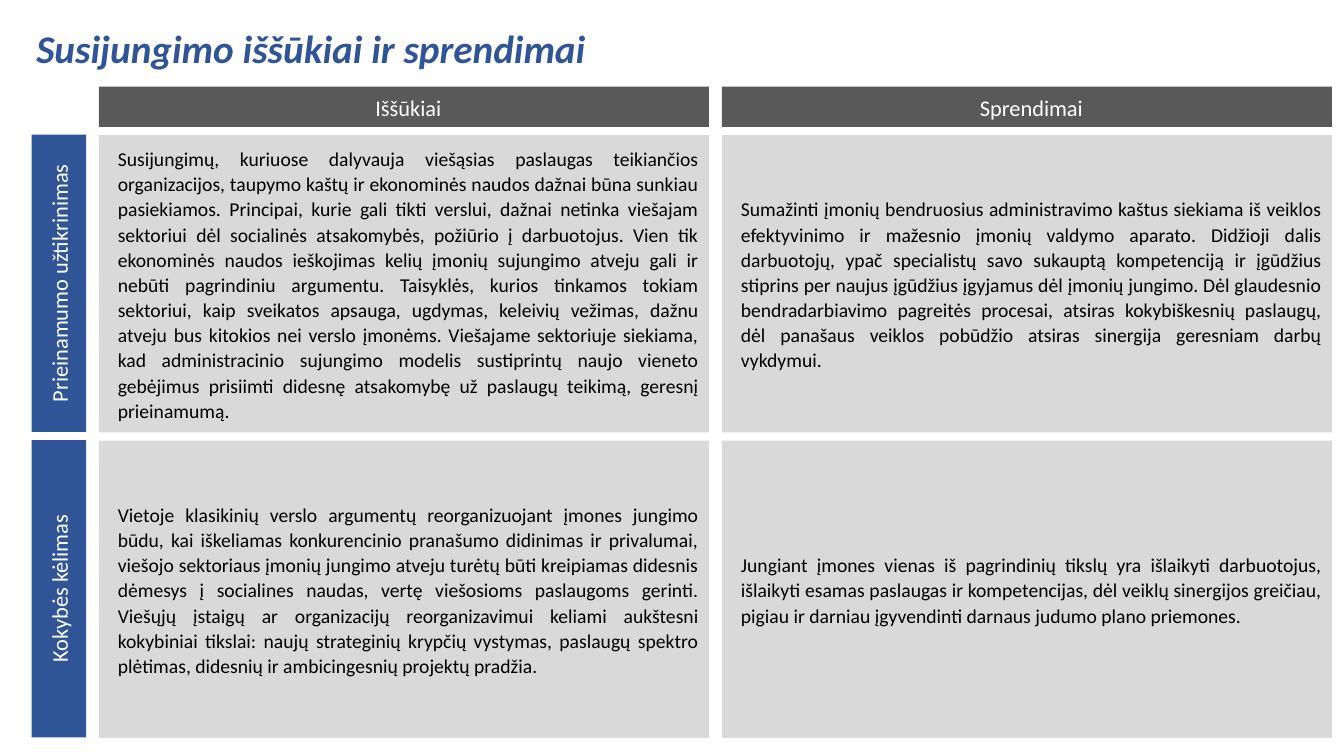
from pptx import Presentation
from pptx.dml.color import RGBColor
from pptx.enum.shapes import MSO_SHAPE
from pptx.enum.text import MSO_ANCHOR, MSO_AUTO_SIZE, PP_ALIGN
from pptx.util import Pt

PX = 9144  # 100 px to the inch
RECTANGLE = MSO_SHAPE.RECTANGLE
TOP, MIDDLE = MSO_ANCHOR.TOP, MSO_ANCHOR.MIDDLE
FIT_SHAPE = MSO_AUTO_SIZE.SHAPE_TO_FIT_TEXT
LEFT, CENTER, JUSTIFY = PP_ALIGN.LEFT, PP_ALIGN.CENTER, PP_ALIGN.JUSTIFY
TITLE_ONLY = 5

FONT = "Calibri"
COLORS = {
    "blue": "2F5597",
    "header": "595959",
    "cell": "D9D9D9",
    "black": "000000",
    "white": "FFFFFF",
}

TITLE = "Susijungimo iššūkiai ir sprendimai"
HEADERS = ["Iššūkiai", "Sprendimai"]
ROWS = [
    ("Prieinamumo užtikrinimas", [
        "Susijungimų, kuriuose dalyvauja viešąsias paslaugas teikiančios "
        "organizacijos, taupymo kaštų ir ekonominės naudos dažnai būna sunkiau "
        "pasiekiamos. Principai, kurie gali tikti verslui, dažnai netinka viešajam "
        "sektoriui dėl socialinės atsakomybės, požiūrio į darbuotojus. Vien tik "
        "ekonominės naudos ieškojimas kelių įmonių sujungimo atveju gali ir nebūti "
        "pagrindiniu argumentu. Taisyklės, kurios tinkamos tokiam sektoriui, kaip "
        "sveikatos apsauga, ugdymas, keleivių vežimas, dažnu atveju bus kitokios nei "
        "verslo įmonėms. Viešajame sektoriuje siekiama, kad administracinio sujungimo "
        "modelis sustiprintų naujo vieneto gebėjimus prisiimti didesnę atsakomybę už "
        "paslaugų teikimą, geresnį prieinamumą.",
        "Sumažinti įmonių bendruosius administravimo kaštus siekiama iš veiklos "
        "efektyvinimo ir mažesnio įmonių valdymo aparato. Didžioji dalis darbuotojų, "
        "ypač specialistų savo sukauptą kompetenciją ir įgūdžius stiprins per naujus "
        "įgūdžius įgyjamus dėl įmonių jungimo. Dėl glaudesnio bendradarbiavimo "
        "pagreitės procesai, atsiras kokybiškesnių paslaugų, dėl panašaus veiklos "
        "pobūdžio atsiras sinergija geresniam darbų vykdymui.",
    ]),
    ("Kokybės kėlimas", [
        "Vietoje klasikinių verslo argumentų reorganizuojant įmones jungimo būdu, kai "
        "iškeliamas konkurencinio pranašumo didinimas ir privalumai, viešojo sektoriaus "
        "įmonių jungimo atveju turėtų būti kreipiamas didesnis dėmesys į socialines "
        "naudas, vertę viešosioms paslaugoms gerinti. Viešųjų įstaigų ar organizacijų "
        "reorganizavimui keliami aukštesni kokybiniai tikslai: naujų strateginių krypčių "
        "vystymas, paslaugų spektro plėtimas, didesnių ir ambicingesnių projektų pradžia.",
        "Jungiant įmones vienas iš pagrindinių tikslų yra išlaikyti darbuotojus, "
        "išlaikyti esamas paslaugas ir kompetencijas, dėl veiklų sinergijos greičiau, "
        "pigiau ir darniau įgyvendinti darnaus judumo plano priemones.",
    ]),
]


def color(name):
    return RGBColor.from_string(COLORS[name])


def set_font(para, size, color_name):
    para.font.name = FONT
    para.font.size = Pt(size)
    para.font.color.rgb = color(color_name)


def add_panel(page, box, text, fill, size, text_color, align, indent=0):
    panel = page.shapes.add_shape(RECTANGLE, *(length * PX for length in box))
    panel.shadow.inherit = False
    panel.fill.solid()
    panel.fill.fore_color.rgb = color(fill)
    panel.line.fill.background()
    frame = panel.text_frame
    frame.word_wrap = True
    frame.vertical_anchor = MIDDLE
    para = frame.paragraphs[0]
    para.text = text
    para.alignment = align
    set_font(para, size, text_color)
    if indent:
        para.line_spacing = 1.07
        para._p.get_or_add_pPr().set("marL", str(indent * PX))
    return panel


def add_title(page, box):
    title = page.shapes.title
    title.left, title.top, title.width, title.height = (length * PX for length in box)
    frame = title.text_frame
    frame.word_wrap = False
    frame.auto_size = FIT_SHAPE
    frame.vertical_anchor = TOP
    para = frame.paragraphs[0]
    para.text = TITLE
    para.alignment = LEFT
    para.space_after = Pt(8)
    set_font(para, 28, "blue")
    para.font.bold = para.font.italic = True


def add_row_label(page, box, text):
    # Swap the sides around the box centre, then turn the text upward
    left, top, width, height = box
    shift = (height - width) // 2
    label = add_panel(page, (left - shift, top + shift, height, width),
                      text, "blue", 16, "white", CENTER)
    label.rotation = 270


def add_matrix(page, box):
    left, top, width, height = box
    label_width, header_height = 54, 40
    column_gap, row_gap = 13, 8
    cell_width = (width - label_width - 2 * column_gap) // 2
    cell_height = (height - header_height - 2 * row_gap) // 2
    columns = [left + label_width + column_gap + i * (cell_width + column_gap)
               for i in range(2)]

    # Column headers
    for x, header in zip(columns, HEADERS):
        add_panel(page, (x, top, cell_width, header_height),
                  header, "header", 16, "white", CENTER, indent=9)

    # Row labels and cells
    for i, (label, texts) in enumerate(ROWS):
        y = top + header_height + row_gap + i * (cell_height + row_gap)
        add_row_label(page, (left, y, label_width, cell_height), label)
        for x, text in zip(columns, texts):
            add_panel(page, (x, y, cell_width, cell_height),
                      text, "cell", 14, "black", JUSTIFY, indent=9)


def main():
    deck = Presentation()
    deck.slide_width, deck.slide_height = 1333 * PX, 750 * PX
    page = deck.slides.add_slide(deck.slide_layouts[TITLE_ONLY])
    add_title(page, (26, 19, 571, 57))
    add_matrix(page, (31, 86, 1290, 646))
    deck.save("out.pptx")


if __name__ == "__main__":
    main()
